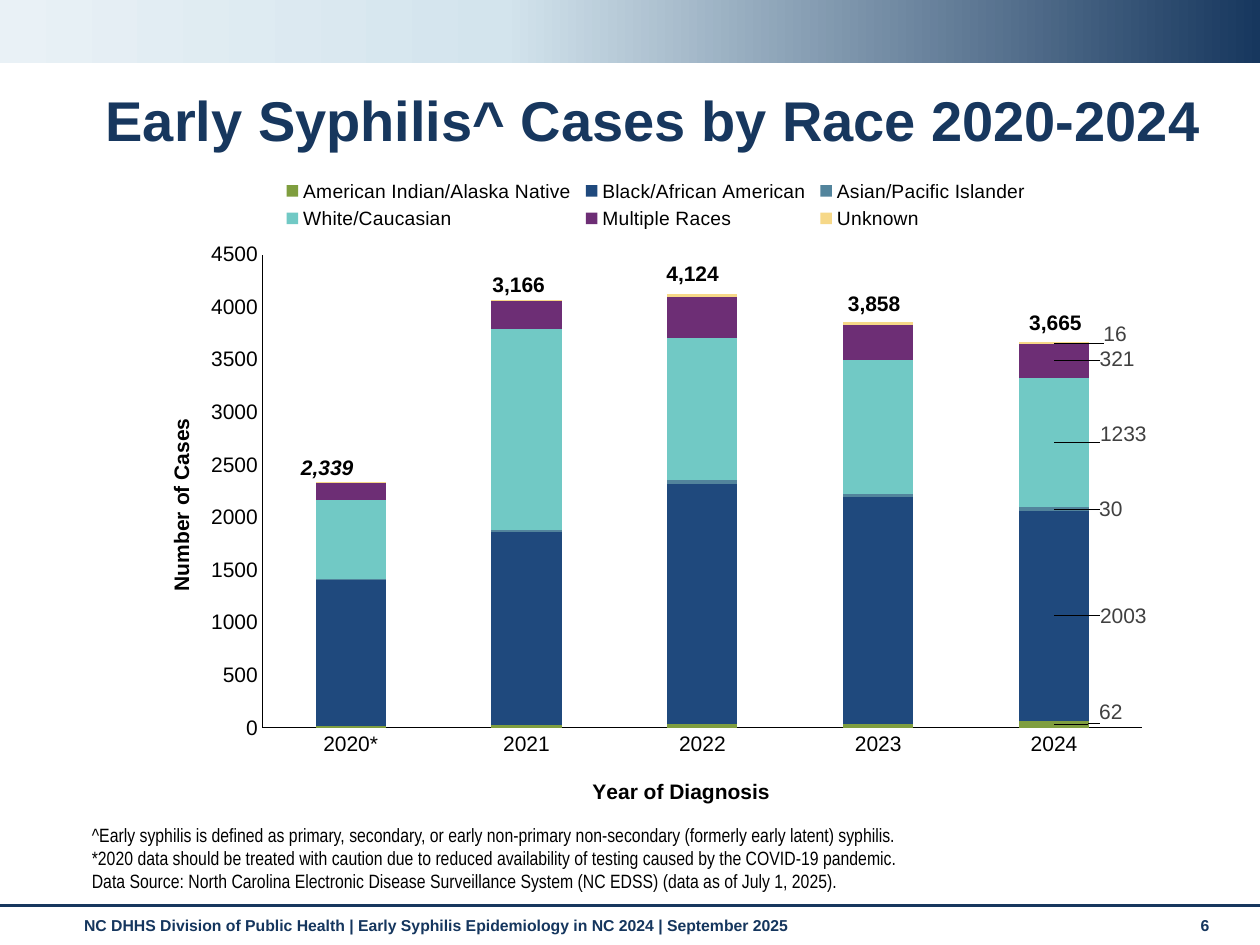
from copy import deepcopy
from pptx import Presentation
from pptx.chart.data import CategoryChartData
from pptx.dml.color import RGBColor
from pptx.enum.chart import XL_CHART_TYPE, XL_LABEL_POSITION, XL_LEGEND_POSITION, XL_TICK_MARK
from pptx.enum.shapes import MSO_CONNECTOR, MSO_SHAPE
from pptx.enum.text import MSO_ANCHOR
from pptx.oxml import parse_xml
from pptx.oxml.ns import nsdecls, qn
from pptx.util import Pt

NAVY = RGBColor(0x17, 0x37, 0x5E)
FOOT = RGBColor(0x15, 0x36, 0x5E)
SKY = RGBColor(0xD3, 0xE4, 0xED)
MIST = RGBColor(0xE9, 0xF1, 0xF6)
BLACK = RGBColor(0, 0, 0)
GRAY = RGBColor(0x40, 0x40, 0x40)

# Content
TITLE = "Early Syphilis^ Cases by Race 2020-2024"
NOTES = [
    "^Early syphilis is defined as primary, secondary, or early non-primary non-secondary "
    "(formerly early latent) syphilis.",
    "*2020 data should be treated with caution due to reduced availability of testing "
    "caused by the COVID-19 pandemic.",
    "Data Source: North Carolina Electronic Disease Surveillance System (NC EDSS) "
    "(data as of July 1, 2025).",
]
FOOTER = "NC DHHS Division of Public Health | Early Syphilis Epidemiology in NC 2024 | September 2025"
YEARS = ["2020*", "2021", "2022", "2023", "2024"]
# Name, values, colour, shift of the 2024 label (share of the chart)
RACES = [
    ("American Indian/Alaska Native", (15, 31, 39, 34, 62), "7F9E3F", (0.055, -0.018)),
    ("Black/African American", (1390, 1832, 2278, 2164, 2003), "1F497D", (0.067, 0)),
    ("Asian/Pacific Islander", (10, 15, 36, 28, 30), "52849C", (0.055, 0)),
    ("White/Caucasian", (754, 1914, 1355, 1270, 1233), "71C9C5", (0.067, -0.013)),
    ("Multiple Races", (166, 271, 393, 337, 321), "6D2E75", (0.061, -0.003)),
    ("Unknown", (4, 3, 23, 25, 16), "F6D888", (0.059, -0.013)),
]
# Total, left, top, italic
TOTALS = [
    ("2,339", 164.9, 256.3, True),
    ("3,166", 274.3, 151.9, False),
    ("4,124", 373.7, 145.4, False),
    ("3,858", 477.4, 162.7, False),
    ("3,665", 581, 173.5, False),
]
BAND = [(0, NAVY), (0.6, SKY), (1, MIST)]

deck = Presentation()
deck.slide_width, deck.slide_height = Pt(720), Pt(540)
slide = deck.slides.add_slide(deck.slide_layouts[6])


def style(font, size, color=BLACK, **more):
    form = {"name": "Arial", "size": Pt(size), **more}
    for key, val in form.items():
        setattr(font, key, val)
    font.color.rgb = color


def write(lines, box, size, color=BLACK, anchor=MSO_ANCHOR.TOP, space=1, **more):
    frame = slide.shapes.add_textbox(*map(Pt, box)).text_frame
    frame.word_wrap = True
    frame.vertical_anchor = anchor
    for i, line in enumerate(lines):
        para = frame.add_paragraph() if i else frame.paragraphs[0]
        para.line_spacing = space
        run = para.add_run()
        run.text = line
        style(run.font, size, color, **more)


def place(node, index, inner=False, edge=True, **spots):
    """Give a chart part a manual layout, in shares of the chart."""
    old = node.find(qn("c:layout"))
    if old is not None:
        node.remove(old)
    body = '<c:layoutTarget val="inner"/>' if inner else ""
    if edge:
        body += '<c:xMode val="edge"/><c:yMode val="edge"/>'
    body += "".join(f'<c:{key} val="{val}"/>' for key, val in spots.items())
    node.insert(index, parse_xml(
        f'<c:layout {nsdecls("c")}><c:manualLayout>{body}</c:manualLayout></c:layout>'))


# Top band
band = slide.shapes.add_shape(MSO_SHAPE.RECTANGLE, 0, 0, Pt(720), Pt(36))
band.shadow.inherit = False
band.line.fill.background()
band.fill.gradient()
band.fill.gradient_angle = 180
stops = band._element.spPr.find(".//" + qn("a:gsLst"))
stops.append(deepcopy(stops[-1]))
for stop, (spot, color) in zip(band.fill.gradient_stops, BAND):
    stop.position = spot
    stop.color.rgb = color

# Footer
rule = slide.shapes.add_connector(MSO_CONNECTOR.STRAIGHT, 0, Pt(517.7), Pt(720), Pt(517.7))
rule.line.color.rgb = NAVY
rule.line.width = Pt(1.75)
rule._element.spPr.append(parse_xml(f'<a:effectLst {nsdecls("a")}/>'))
write([FOOTER], (41, 519.8, 629.3, 20.9), 9, FOOT, bold=True)
write(["6"], (679, 519.8, 31.7, 21.6), 9, FOOT, bold=True)

# Title and notes
write([TITLE], (53.3, 49, 657.4, 43.2), 32, NAVY, MSO_ANCHOR.MIDDLE, 0.9, bold=True)
write(NOTES, (45.4, 468, 629.3, 45.4), 11, anchor=MSO_ANCHOR.BOTTOM, name="Arial Narrow")

# Chart
data = CategoryChartData(number_format="0")
data.categories = YEARS
for name, vals, *_ in RACES:
    data.add_series(name, vals)
chart = slide.shapes.add_chart(XL_CHART_TYPE.COLUMN_STACKED, Pt(76.3), Pt(92.2),
                               Pt(591.1), Pt(380.9), data).chart
style(chart.font, 10)
chart.has_title = False
plot = chart.plots[0]
for key, val in {"gap_width": 150, "overlap": 100, "vary_by_categories": False}.items():
    setattr(plot, key, val)
place(chart._chartSpace.find(".//" + qn("c:plotArea")), 0, inner=True,
      x=0.125, y=0.14, w=0.85, h=0.71)

chart.has_legend = True
legend = chart.legend
legend.position = XL_LEGEND_POSITION.TOP
legend.include_in_layout = False
style(legend.font, 11)
place(legend._element, 1, x=0.14, y=0.02, w=0.73, h=0.09)

# Axes
for axis, text, turn, x, y in [
    (chart.category_axis, "Year of Diagnosis", 0, 0.44, 0.92),
    (chart.value_axis, "Number of Cases", -5400000, 0.03, 0.38),
]:
    form = {"has_major_gridlines": False, "major_tick_mark": XL_TICK_MARK.NONE,
            "minor_tick_mark": XL_TICK_MARK.NONE}
    for key, val in form.items():
        setattr(axis, key, val)
    style(axis.tick_labels.font, 12)
    axis.format.line.color.rgb = BLACK
    axis.format.line.width = Pt(0.75)
    frame = axis.axis_title.text_frame
    frame.text = text
    style(frame.paragraphs[0].runs[0].font, 12, bold=True)
    frame._txBody.bodyPr.set("rot", str(turn))
    frame._txBody.bodyPr.set("vert", "horz")
    place(axis.axis_title._element, 1, x=x, y=y)
scale = {"minimum_scale": 0, "maximum_scale": 4500, "major_unit": 500}
for key, val in scale.items():
    setattr(chart.value_axis, key, val)

# Series colours and 2024 labels
for part, (_, _, color, (dx, dy)) in zip(plot.series, RACES):
    part.format.fill.solid()
    part.format.fill.fore_color.rgb = RGBColor.from_string(color)
    part.data_labels.show_value = False
    label = part.points[len(YEARS) - 1].data_label
    style(label.font, 12, GRAY)
    label.position = XL_LABEL_POSITION.CENTER
    place(part._element.find(".//" + qn("c:dLbl")), 1, edge=False, x=dx, y=dy)

# Totals above the columns
for text, left, top, slant in TOTALS:
    write([text], (left, top, 51.8, 21.6), 12, bold=True, italic=slant)

deck.save("out.pptx")
